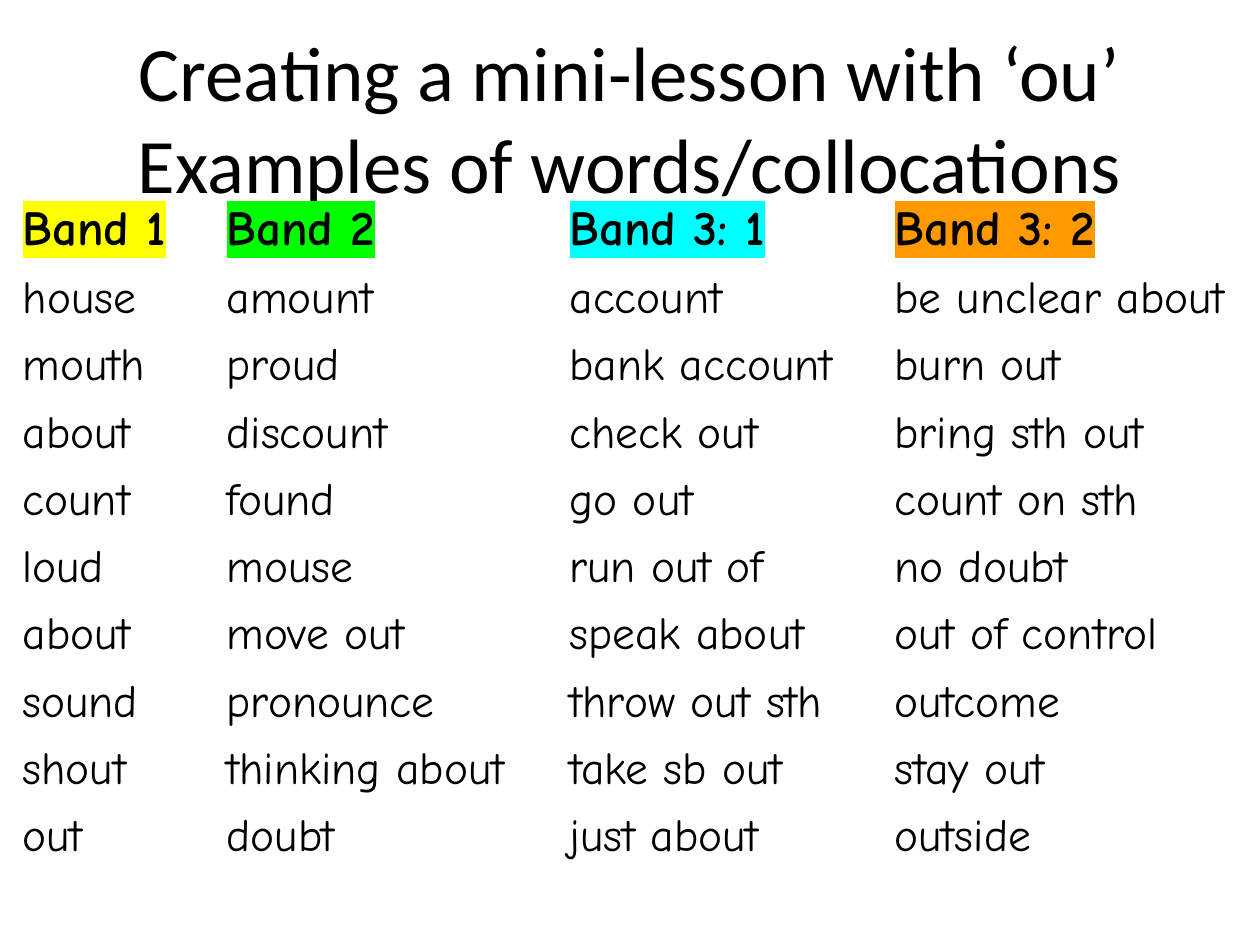
from lxml.etree import SubElement
from pptx import Presentation
from pptx.dml.color import RGBColor
from pptx.enum.text import MSO_ANCHOR as Anchor, PP_ALIGN as Align
from pptx.oxml.ns import qn
from pptx.util import Pt

PX = 914400 / 126  # EMU per px

TITLE = ["Creating a mini-lesson with ‘ou’", "Examples of words/collocations"]

# heading, highlight, column width, words
BANDS = [
    ("Band 1", "FFFF00", 204,
     ["house", "mouth", "about", "count", "loud",
      "about", "sound", "shout", "out"]),
    ("Band 2", "00FF00", 343,
     ["amount", "proud", "discount", "found", "mouse",
      "move out", "pronounce", "thinking about", "doubt"]),
    ("Band 3: 1", "00FFFF", 325,
     ["account", "bank account", "check out", "go out", "run out of",
      "speak about", "throw out sth", "take sb out", "just about"]),
    ("Band 3: 2", "FF9900", 378,
     ["be unclear about", "burn out", "bring sth out", "count on sth",
      "no doubt", "out of control", "outcome", "stay out", "outside"]),
]


def px(n):
    return round(n * PX)


def color(value):
    return RGBColor.from_string(value)


def add_run(p, text, font, size, bold=False, highlight=None):
    r = p.add_run()
    r.text = text
    r.font.name, r.font.size, r.font.bold = font, Pt(size), bold
    r.font.color.rgb = color("000000")
    if highlight:
        rPr = r.font._element
        mark = SubElement(rPr, qn("a:highlight"))
        SubElement(mark, qn("a:srgbClr")).set("val", highlight)
        rPr.find(qn("a:solidFill")).addnext(mark)


def add_title(s, x, y, w, h):
    tf = s.shapes.add_textbox(px(x), px(y), px(w), px(h)).text_frame
    tf.word_wrap = True
    tf.vertical_anchor = Anchor.MIDDLE
    p = tf.paragraphs[0]
    p.alignment = Align.CENTER
    for i, line in enumerate(TITLE):
        if i:
            p.add_line_break()
        add_run(p, line, "Calibri", 44)


def add_word_table(s, x, y, w, h, head_h=58, row_h=52):
    n_rows = 1 + len(BANDS[0][3])
    frame = s.shapes.add_table(n_rows, len(BANDS), px(x), px(y), px(w), px(h))
    table = frame.table
    table.first_row = table.horz_banding = False
    # Plain style: no fill, no grid
    table._tbl.tblPr.find(qn("a:tableStyleId")).text = \
        "{2D5ABB26-0587-4C30-8999-92F81FD0307C}"
    for i, row in enumerate(table.rows):
        row.height = px(row_h if i else head_h)
    frame.height = px(h)

    for c, (heading, highlight, width, words) in enumerate(BANDS):
        table.columns[c].width = px(width)
        for i, text in enumerate([heading] + words):
            cell = table.cell(i, c)
            cell.fill.background()
            p = cell.text_frame.paragraphs[0]
            if i:
                add_run(p, text, "Comic Neue", 26)
            else:
                add_run(p, text, "Comic Neue", 28, True, highlight)


def main():
    prs = Presentation()
    prs.slide_width, prs.slide_height = px(1260), px(945)
    s = prs.slides.add_slide(prs.slide_layouts[6])
    add_title(s, 63, 38, 1134, 157)
    add_word_table(s, 10, 195, 1250, 677)
    prs.save("out.pptx")


if __name__ == "__main__":
    main()
